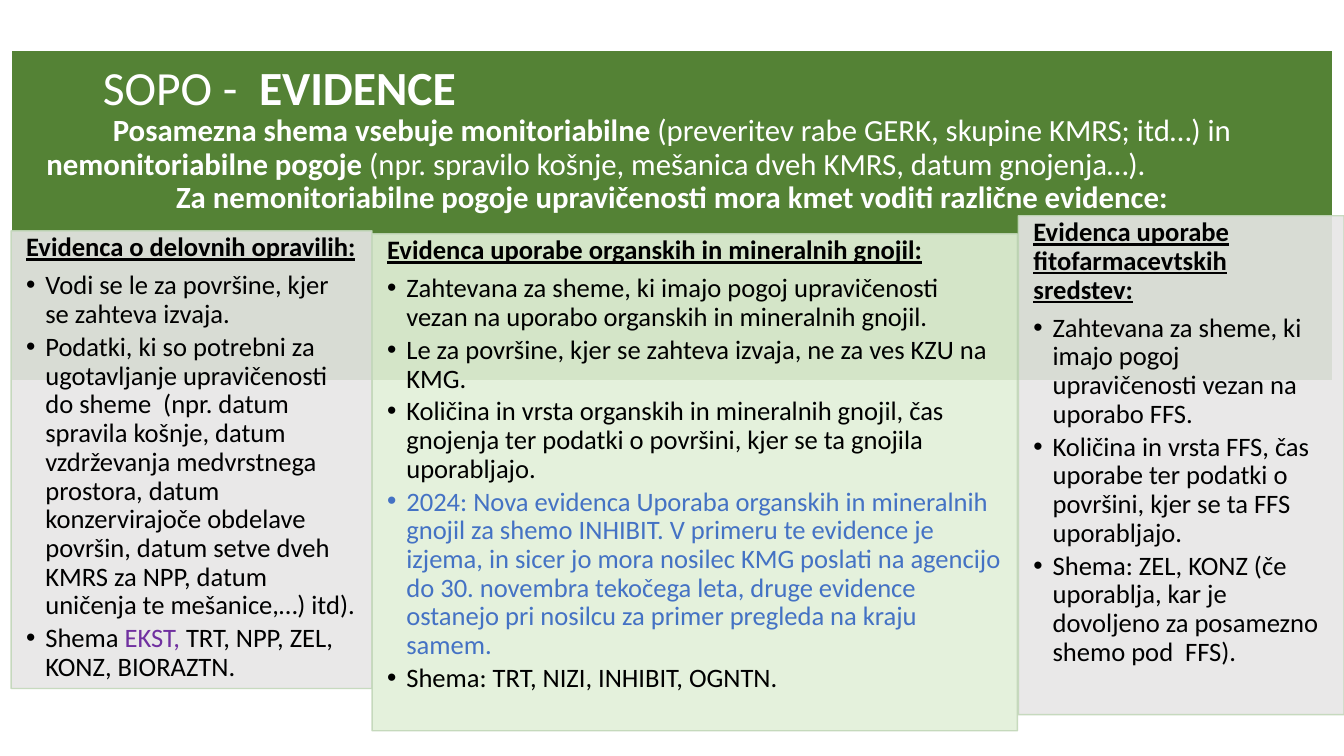
from lxml import etree
from pptx import Presentation
from pptx.dml.color import RGBColor
from pptx.enum.shapes import MSO_SHAPE
from pptx.enum.text import MSO_ANCHOR, MSO_AUTO_SIZE, PP_ALIGN
from pptx.oxml.ns import qn
from pptx.util import Inches, Pt

RECTANGLE = MSO_SHAPE.RECTANGLE
TOP, MIDDLE = MSO_ANCHOR.TOP, MSO_ANCHOR.MIDDLE
LEFT, CENTER = PP_ALIGN.LEFT, PP_ALIGN.CENTER
NO_FIT = MSO_AUTO_SIZE.NONE

COLORS = {
    "band": "548235", "white": "FFFFFF", "black": "000000",
    "grey": "E7E6E6", "mint": "E2F0D9", "edge": "C2D7B9",
    "purple": "7030A0", "blue": "4472C4",
}


def add_text(paragraph, text, size=19, color="black", bold=False, underline=False):
    run = paragraph.add_run()
    run.text = text
    run.font.name = "Calibri"
    run.font.size = Pt(size)
    run.font.bold = bold
    run.font.underline = underline
    run.font.color.rgb = RGBColor.from_string(COLORS[color])


def format_paragraph(paragraph, align=LEFT, after=0, margin=0, hanging=0):
    paragraph.alignment = align
    paragraph.line_spacing = 0.9
    paragraph.space_before = Pt(0)
    paragraph.space_after = Pt(after)
    props = paragraph._p.get_or_add_pPr()
    props.set("marL", str(Inches(margin)))
    props.set("indent", str(-Inches(hanging)))
    if hanging:
        etree.SubElement(props, qn("a:buFont")).set("typeface", "Arial")
        etree.SubElement(props, qn("a:buChar")).set("char", "•")
    else:
        etree.SubElement(props, qn("a:buNone"))


prs = Presentation()
prs.slide_width, prs.slide_height = Inches(13.33), Inches(7.5)
slide = prs.slides.add_slide(prs.slide_layouts.get_by_name("Comparison"))

# Green band behind everything
band = slide.shapes.add_shape(
    RECTANGLE, Inches(0.11), Inches(0.5), Inches(13.11), Inches(3.28))
band.shadow.inherit = False
band.fill.solid()
band.fill.fore_color.rgb = RGBColor.from_string(COLORS["band"])
band.line.color.rgb = RGBColor.from_string(COLORS["white"])
band.line.width = Pt(1)
slide.shapes._spTree.insert(2, band._element)

# Title: alignment, left margin, size, then bold and regular runs
title_lines = [
    (LEFT, 0.65, 34, [("SOPO -  ", False), ("EVIDENCE", True)]),
    (CENTER, 0, 22, [("Posamezna shema vsebuje monitoriabilne ", True),
                     ("(preveritev rabe GERK, skupine KMRS; itd…) in", False)]),
    (LEFT, 0.09, 22, [("nemonitoriabilne pogoje ", True),
                      ("(npr. spravilo košnje, mešanica dveh KMRS, datum gnojenja…).", False)]),
    (CENTER, 0, 22, [("Za nemonitoriabilne pogoje upravičenosti mora kmet voditi "
                      "različne evidence:", True)]),
]
title = slide.shapes.title
title.left, title.top = Inches(0.11), Inches(0.5)
title.width, title.height = Inches(13.11), Inches(1.77)
frame = title.text_frame
frame.word_wrap, frame.auto_size, frame.vertical_anchor = True, NO_FIT, MIDDLE
frame.margin_left = frame.margin_right = Inches(0.26)
frame.margin_top = frame.margin_bottom = Inches(0.1)
for number, (align, margin, size, runs) in enumerate(title_lines):
    line = frame.add_paragraph() if number else frame.paragraphs[0]
    format_paragraph(line, align=align, margin=margin)
    for text, bold in runs:
        add_text(line, text, size=size, color="white", bold=bold)

# Record panels: place, fill, heading, bullets made of (text, colour) runs
records = [
    ((0.11, 2.29, 3.58, 4.54), "grey", "Evidenca o delovnih opravilih:", [
        [("Vodi se le za površine, kjer se zahteva izvaja.", "black")],
        [("Podatki, ki so potrebni za ugotavljanje upravičenosti do sheme  (npr. datum "
          "spravila košnje, datum vzdrževanja medvrstnega prostora, datum konzervirajoče "
          "obdelave površin, datum setve dveh KMRS za NPP, datum uničenja te "
          "mešanice,…) itd).", "black")],
        [("Shema ", "black"), ("EKST, ", "purple"),
         ("TRT, NPP, ZEL, KONZ, BIORAZTN.", "black")],
    ]),
    ((3.69, 2.32, 6.4, 4.93), "mint", "Evidenca uporabe organskih in mineralnih gnojil:", [
        [("Zahtevana za sheme, ki imajo pogoj upravičenosti vezan na uporabo organskih "
          "in mineralnih gnojil.", "black")],
        [("Le za površine, kjer se zahteva izvaja, ne za ves KZU na KMG.", "black")],
        [("Količina in vrsta organskih in mineralnih gnojil, čas gnojenja ter podatki o "
          "površini, kjer se ta gnojila uporabljajo.", "black")],
        [("2024: Nova evidenca Uporaba organskih in mineralnih gnojil za shemo INHIBIT. "
          "V primeru te evidence je izjema, in sicer jo mora nosilec KMG poslati na "
          "agencijo do 30. novembra tekočega leta, druge evidence ostanejo pri nosilcu "
          "za primer pregleda na kraju samem.", "blue")],
        [("Shema: TRT, NIZI, INHIBIT, OGNTN.", "black")],
    ]),
    ((10.1, 2.14, 3.23, 4.95), "grey", "Evidenca uporabe fitofarmacevtskih sredstev:", [
        [("Zahtevana za sheme, ki imajo pogoj upravičenosti vezan na uporabo FFS.", "black")],
        [("Količina in vrsta FFS, čas uporabe ter podatki o površini, kjer se ta FFS "
          "uporabljajo.", "black")],
        [("Shema: ZEL, KONZ (če uporablja, kar je dovoljeno za posamezno shemo pod  FFS).",
          "black")],
    ]),
]
*panels, unused = [p for p in slide.placeholders if p.placeholder_format.idx in (1, 2, 3, 4)]
unused._element.getparent().remove(unused._element)

for panel, (place, fill, heading, bullets) in zip(panels, records):
    panel.left, panel.top, panel.width, panel.height = map(Inches, place)
    panel.fill.solid()
    panel.fill.fore_color.rgb = RGBColor.from_string(COLORS[fill])
    panel.line.color.rgb = RGBColor.from_string(COLORS["edge"])
    panel.line.width = Pt(1)
    for color in panel._element.spPr.iter(qn("a:srgbClr")):
        etree.SubElement(color, qn("a:alpha")).set("val", "90000")

    frame = panel.text_frame
    frame.word_wrap, frame.auto_size, frame.vertical_anchor = True, NO_FIT, TOP
    frame.margin_left = frame.margin_right = Inches(0.15)
    frame.margin_top = frame.margin_bottom = Inches(0.03)
    format_paragraph(frame.paragraphs[0], after=6.65)
    add_text(frame.paragraphs[0], heading, bold=True, underline=True)
    for runs in bullets:
        bullet = frame.add_paragraph()
        format_paragraph(bullet, after=2.85, margin=0.19, hanging=0.19)
        for text, color in runs:
            add_text(bullet, text, color=color)

prs.save("out.pptx")
